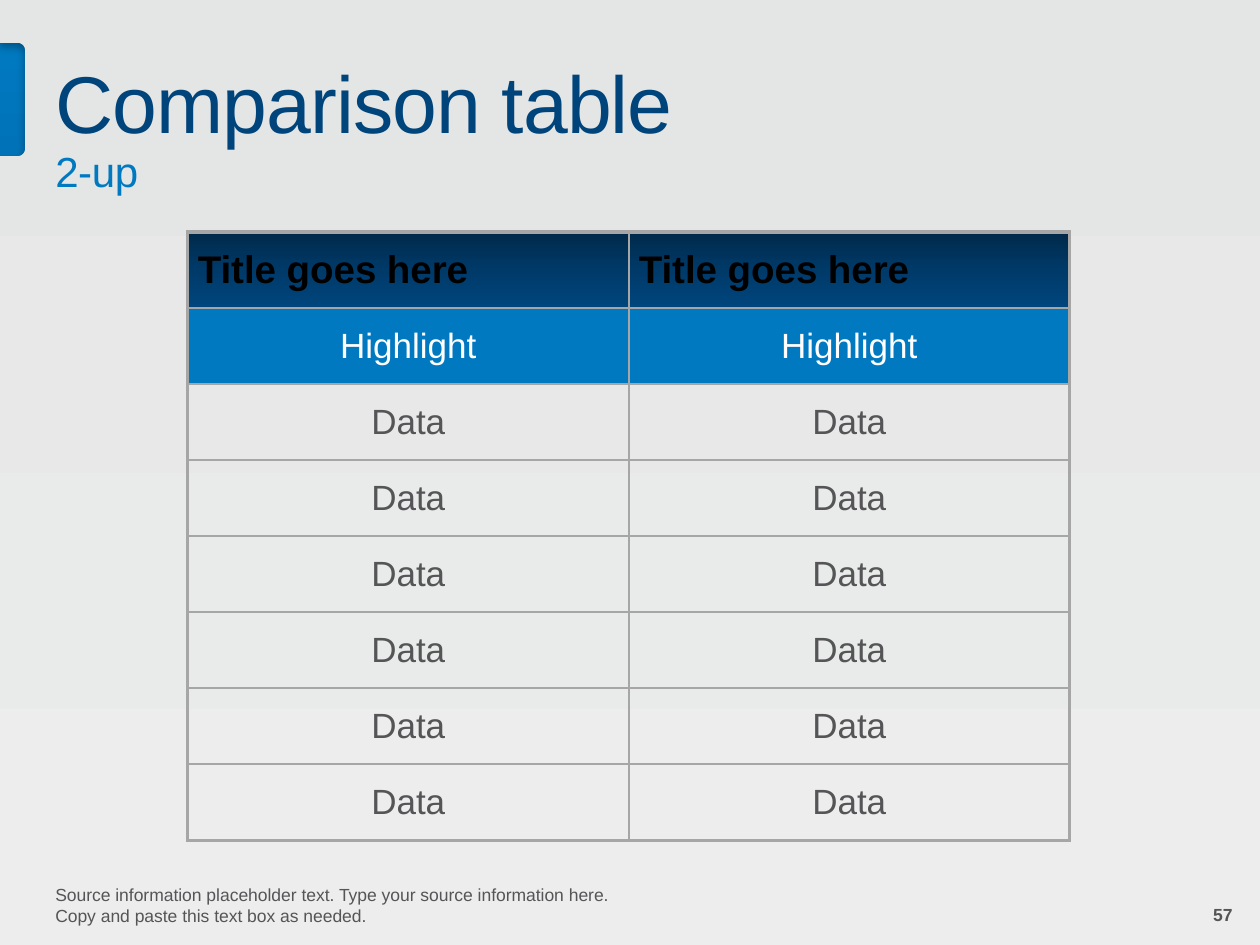
import math

import lxml.etree
import pptx
import pptx.dml.color
import pptx.enum.text
import pptx.oxml
import pptx.oxml.ns
import pptx.util

Inches = pptx.util.Inches
Pt = pptx.util.Pt
qn = pptx.oxml.ns.qn
ANCHOR = pptx.enum.text.MSO_ANCHOR
ALIGN = pptx.enum.text.PP_ALIGN

FONT = "Arial"
NAVY, BLUE, GRAY, RULE = "00447C", "0079C1", "555457", "A6A6A6"
HEADER_STOPS = [(0, "002949"), (50, "003A69"), (100, "00457C")]
ROWS = [("Title goes here",) * 2, ("Highlight",) * 2] + [("Data",) * 2] * 6


def rgb(value):
    return pptx.dml.color.RGBColor.from_string(value)


def sub(parent, tag, **attrs):
    element = lxml.etree.SubElement(parent, qn(tag))
    for name, value in attrs.items():
        element.set(name, str(value))
    return element


def set_gradient(fill, owner, stops):
    """Fill from top to bottom; owner is the XML element that holds the fill."""
    fill.gradient()
    grad = owner.find(".//" + qn("a:gradFill"))
    for child in list(grad):
        grad.remove(child)
    stop_list = sub(grad, "a:gsLst")
    for position, color in stops:
        stop = sub(stop_list, "a:gs", pos=position * 1000)
        sub(stop, "a:srgbClr", val=color)
    sub(grad, "a:lin", ang=90 * 60000, scaled=0)


def add_run(p, text, size, color, bold=False, spacing=None):
    r = p.add_run()
    r.text = text
    r.font.name = FONT
    r.font.size = Pt(size)
    r.font.bold = bold
    r.font.color.rgb = rgb(color)
    if spacing is not None:
        r._r.get_or_add_rPr().set("spc", str(round(spacing * 100)))


def corner(x, y, radius, start):
    """Points of a quarter circle around (x, y), clockwise from start degrees."""
    angles = [math.radians(start + step * 15) for step in range(7)]
    return [(x + radius * math.cos(a), y + radius * math.sin(a)) for a in angles]


def add_panel(slide):
    """Light page with a rounded notch that lets the blue background show."""
    points = [(0, 0.34)]
    points += corner(0.14, 0.4, 0.06, -90) + corner(0.14, 1.18, 0.06, 0)
    points += [(0, 1.24), (0, 7.5), (10, 7.5), (10, 0)]
    builder = slide.shapes.build_freeform(0, 0)
    builder.add_line_segments([(Inches(x), Inches(y)) for x, y in points])
    sp = builder.convert_to_shape()
    sp.line.fill.background()
    set_gradient(sp.fill, sp._element.spPr, [(0, "E4E6E5"), (100, "ECEDEC")])
    sp.shadow.inherit = False
    effects = sp._element.spPr.find(qn("a:effectLst"))
    shadow = sub(effects, "a:outerShdw", blurRad=Pt(4), dist=Pt(3),
                 dir=90 * 60000, algn="t", rotWithShape=0)
    sub(sub(shadow, "a:srgbClr", val="000000"), "a:alpha", val=30000)


def add_title(slide, text):
    title = slide.shapes.title
    slide.shapes._spTree.append(title._element)
    title.left, title.top = Inches(0.34), Inches(0.34)
    title.width, title.height = Inches(9), Inches(0.88)
    tf = title.text_frame
    tf.vertical_anchor = ANCHOR.BOTTOM
    tf.margin_bottom = Inches(0.03)
    p = tf.paragraphs[0]
    p.alignment = ALIGN.LEFT
    add_run(p, text, 46, NAVY, spacing=-0.5)


def add_text(slide, text, box, size, color, bold=False, spacing=None,
             anchor=ANCHOR.TOP, align=ALIGN.LEFT, line_spacing=None):
    sp = slide.shapes.add_textbox(*(Inches(v) for v in box))
    tf = sp.text_frame
    tf.word_wrap = True
    tf.vertical_anchor = anchor
    p = tf.paragraphs[0]
    p.alignment = align
    if line_spacing:
        p.line_spacing = Pt(line_spacing)
    add_run(p, text, size, color, bold, spacing)


def set_borders(cell, widths):
    """Widths in points for left, right, top and bottom."""
    tc_pr = cell._tc.get_or_add_tcPr()
    for index, (side, width) in enumerate(zip("LRTB", widths)):
        line = sub(tc_pr, "a:ln" + side, w=Pt(width))
        sub(sub(line, "a:solidFill"), "a:srgbClr", val=RULE)
        tc_pr.insert(index, line)


def format_cell(cell, text, row):
    cell.vertical_anchor = ANCHOR.MIDDLE
    cell.margin_left = cell.margin_right = Inches(0.08)
    p = cell.text_frame.paragraphs[0]
    if row == 0:
        set_gradient(cell.fill, cell._tc, HEADER_STOPS)
        add_run(p, text, 22, "000000", bold=True)
        return
    p.alignment = ALIGN.CENTER
    if row == 1:
        cell.fill.solid()
        cell.fill.fore_color.rgb = rgb(BLUE)
        add_run(p, text, 20, "FFFFFF")
    else:
        cell.fill.background()
        add_run(p, text, 20, GRAY)


def add_comparison_table(slide):
    last_row, last_col = len(ROWS) - 1, len(ROWS[0]) - 1
    frame = slide.shapes.add_table(len(ROWS), len(ROWS[0]), Inches(1.49),
                                   Inches(1.84), Inches(7), Inches(4.83))
    table = frame.table
    table.first_row = table.horz_banding = False
    for i, texts in enumerate(ROWS):
        for j, text in enumerate(texts):
            cell = table.cell(i, j)
            format_cell(cell, text, i)
            outer = (j == 0, j == last_col, i == 0, i == last_row)
            set_borders(cell, [2.25 if edge else 1.5 for edge in outer])


def main():
    prs = pptx.Presentation()
    prs.slide_width, prs.slide_height = Inches(10), Inches(7.5)
    slide = prs.slides.add_slide(prs.slide_layouts[5])
    set_gradient(slide.background.fill, slide._element,
                 [(5, "0079C0"), (85, "00457C")])
    add_panel(slide)
    add_text(slide, "57", (6.76, 7.12, 3.12, 0.27), 10, GRAY, bold=True,
             anchor=ANCHOR.BOTTOM, align=ALIGN.RIGHT)
    add_title(slide, "Comparison table")
    add_comparison_table(slide)
    add_text(slide, "2-up", (0.34, 1.17, 5.98, 0.45), 24, BLUE,
             spacing=-0.2, line_spacing=24)
    add_text(slide, "Source information placeholder text. Type your source "
             "information here. Copy and paste this text box as needed.",
             (0.34, 6.96, 4.79, 0.44), 10, GRAY, anchor=ANCHOR.BOTTOM)
    prs.save("out.pptx")


if __name__ == "__main__":
    main()
